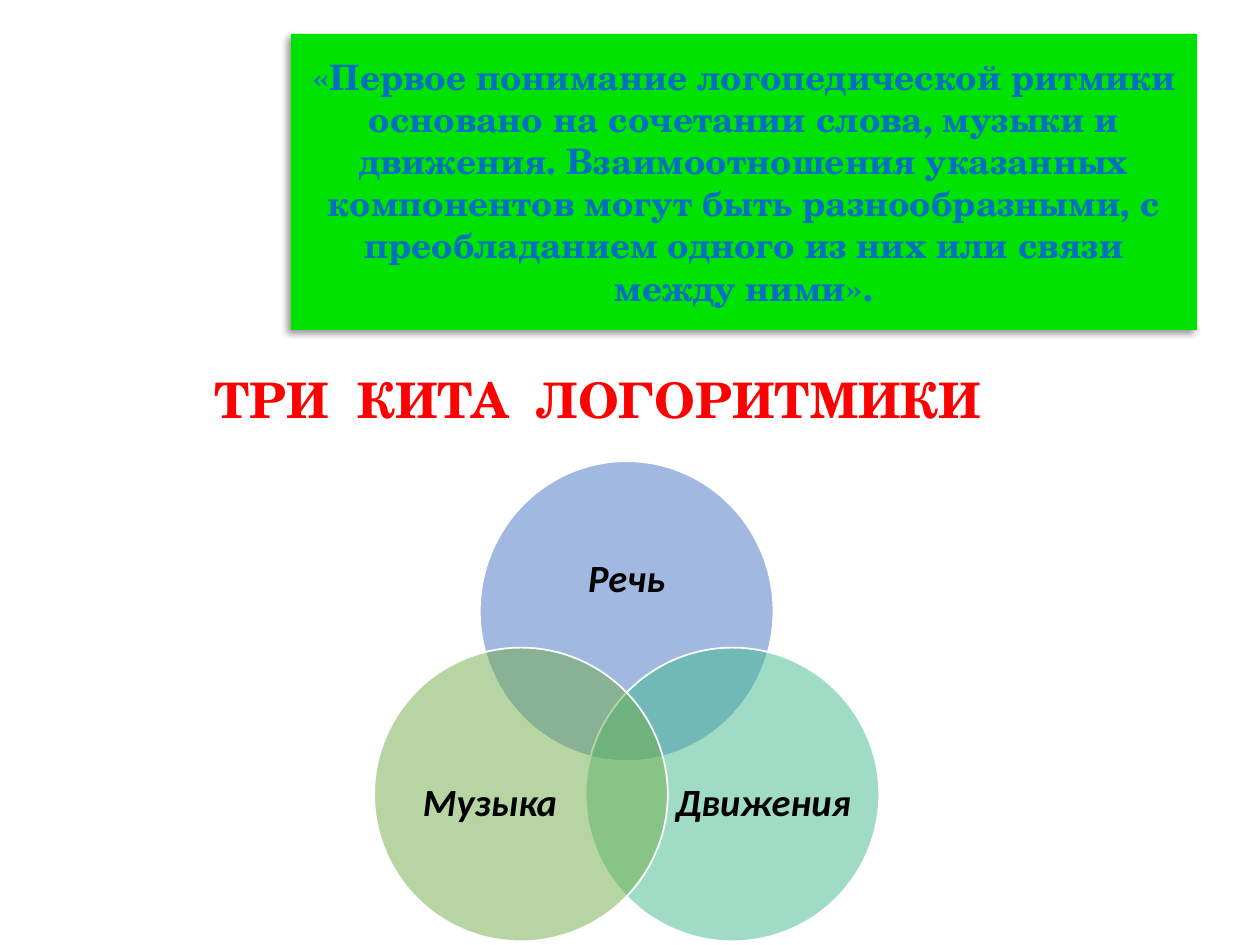
from dataclasses import dataclass

from lxml import etree
from pptx import Presentation
from pptx.dml.color import RGBColor
from pptx.enum.shapes import MSO_SHAPE
from pptx.enum.text import MSO_ANCHOR, MSO_AUTO_SIZE, PP_ALIGN
from pptx.oxml.ns import qn
from pptx.util import Pt

CENTER = PP_ALIGN.CENTER
MIDDLE = MSO_ANCHOR.MIDDLE
FIXED_SIZE = MSO_AUTO_SIZE.NONE
GROW = MSO_AUTO_SIZE.SHAPE_TO_FIT_TEXT
OVAL = MSO_SHAPE.OVAL
TITLE_ONLY = 5
EMU_PER_POINT = 12700


@dataclass(frozen=True)
class Theme:
    serif: str = "TeX Gyre Schola"
    sans: str = "Calibri"
    quote_size: int = 20
    heading_size: int = 28
    label_size: int = 22
    panel: str = "00E200"
    quote: str = "0070C0"
    heading: str = "FF0000"
    heading_outline: str = "BD8E00"
    shadow: str = "000000"
    label: str = "000000"
    rim: str = "FFFFFF"
    speech: str = "4472C4"
    movement: str = "43BB8D"
    music: str = "70AD47"


THEME = Theme()
QUOTE = (
    "«Первое понимание логопедической ритмики основано на сочетании слова, "
    "музыки и движения. Взаимоотношения указанных компонентов могут быть "
    "разнообразными, с преобладанием одного из них или связи между ними»."
)


def points(*values):
    return [Pt(value) for value in values]


def add_span(para, text, face, size, color, italic=False):
    para.alignment = CENTER
    span = para.add_run()
    span.text = text
    font = span.font
    font.name, font.size = face, Pt(size)
    font.bold, font.italic = True, italic
    font.color.rgb = RGBColor.from_string(color)
    return span


def add_color(parent, color, alpha=None):
    node = etree.SubElement(parent, qn("a:srgbClr"), val=color)
    if alpha is not None:
        etree.SubElement(node, qn("a:alpha"), val=str(alpha * 1000))


def add_shadow(shape, color, alpha, blur, distance, angle):
    effects = etree.SubElement(shape._element.spPr, qn("a:effectLst"))
    shadow = etree.SubElement(
        effects, qn("a:outerShdw"),
        blurRad=str(blur * EMU_PER_POINT), dist=str(distance * EMU_PER_POINT),
        dir=str(angle * 60000), algn="tr", rotWithShape="0",
    )
    add_color(shadow, color, alpha)


def outline_text(span, color, width):
    line = etree.Element(qn("a:ln"), w=str(round(width * EMU_PER_POINT)))
    add_color(etree.SubElement(line, qn("a:solidFill")), color)
    span.font._element.insert(0, line)


def set_opacity(shape, percent):
    color = shape._element.spPr.find(qn("a:solidFill"))[0]
    etree.SubElement(color, qn("a:alpha"), val=str(percent * 1000))


def place_quote(page, left, top, width, height):
    title = page.shapes.title
    title.left, title.top, title.width, title.height = points(left, top, width, height)
    title.fill.solid()
    title.fill.fore_color.rgb = RGBColor.from_string(THEME.panel)
    add_shadow(title, THEME.shadow, alpha=40, blur=4, distance=3, angle=135)
    frame = title.text_frame
    frame.word_wrap, frame.auto_size = True, FIXED_SIZE
    frame.vertical_anchor = MIDDLE
    add_span(frame.paragraphs[0], QUOTE, THEME.serif, THEME.quote_size, THEME.quote)


def place_heading(page, left, top, width, height):
    box = page.shapes.add_textbox(*points(left, top, width, height))
    frame = box.text_frame
    frame.word_wrap, frame.auto_size = True, GROW
    span = add_span(frame.paragraphs[0], "ТРИ  КИТА  ЛОГОРИТМИКИ",
                    THEME.serif, THEME.heading_size, THEME.heading)
    outline_text(span, THEME.heading_outline, 0.71)


def add_circle(group, left, top, width, height, color):
    circle = group.shapes.add_shape(OVAL, *points(left, top, width, height))
    circle.shadow.inherit = False
    circle.fill.solid()
    circle.fill.fore_color.rgb = RGBColor.from_string(color)
    set_opacity(circle, 50)
    circle.line.color.rgb = RGBColor.from_string(THEME.rim)
    circle.line.width = Pt(1)


def add_label(group, left, top, width, height, text):
    box = group.shapes.add_textbox(*points(left, top, width, height))
    frame = box.text_frame
    frame.word_wrap, frame.vertical_anchor = True, MIDDLE
    frame.margin_left = frame.margin_right = Pt(0)
    frame.margin_top = frame.margin_bottom = Pt(0)
    para = frame.paragraphs[0]
    para.line_spacing = 0.9
    add_span(para, text, THEME.sans, THEME.label_size, THEME.label, italic=True)


def place_venn(page, left, top, diameter):
    group = page.shapes.add_group_shape()
    step, drop = 0.72 * diameter, 106.6
    upper_label = (22.3, 29.5, 123.1, 77)
    right_label = (51.1, 43.2, 100.8, 92.2)
    left_label = (15.8, 43.2, 100.8, 92.2)
    circles = [
        ("Речь", THEME.speech, step / 2, 0, diameter + 3.6, upper_label),
        ("Движения", THEME.movement, step, drop, diameter, right_label),
        ("Музыка", THEME.music, 0, drop, diameter, left_label),
    ]
    for text, color, across, down, height, label in circles:
        x, y = left + across, top + down
        add_circle(group, x, y, diameter, height, color)
        label_x, label_y, label_width, label_height = label
        add_label(group, x + label_x, y + label_y, label_width, label_height, text)


def main():
    deck = Presentation()
    deck.slide_width, deck.slide_height = points(720, 540)
    page = deck.slides.add_slide(deck.slide_layouts[TITLE_ONLY])
    place_quote(page, 166.3, 19.4, 517.7, 169.2)
    place_venn(page, 213.8, 263.5, 167.8)
    place_heading(page, 104.4, 207.4, 474.5, 41)
    deck.save("out.pptx")


if __name__ == "__main__":
    main()
